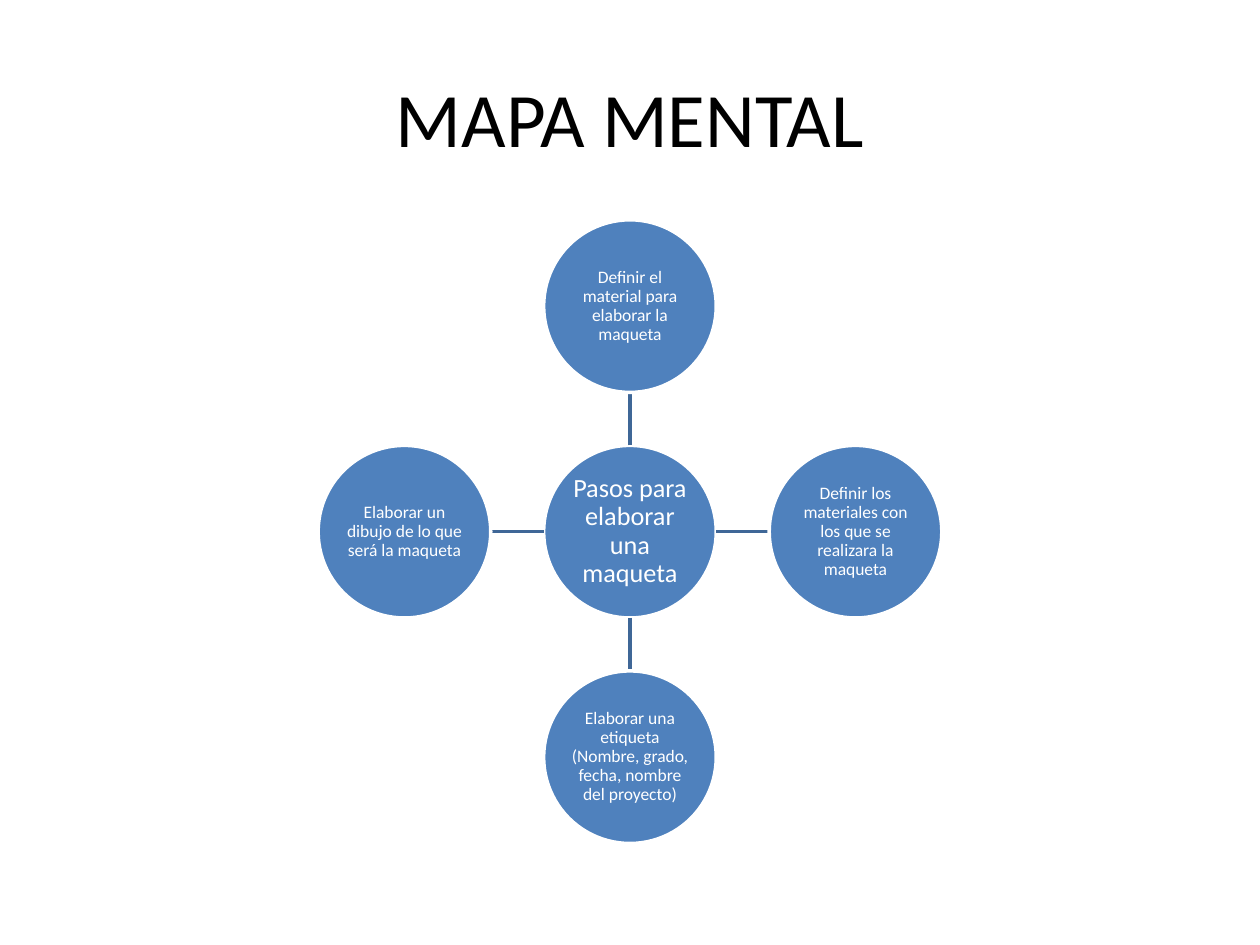
from dataclasses import dataclass

from lxml.etree import SubElement as Sub
from pptx import Presentation as Deck
from pptx.dml.color import RGBColor as Rgb
from pptx.enum.shapes import MSO_CONNECTOR as Link, MSO_SHAPE as Kind
from pptx.enum.text import MSO_ANCHOR as Anchor, PP_ALIGN as Align
from pptx.oxml.ns import qn
from pptx.util import Inches, Pt


@dataclass(frozen=True)
class Theme:
    font: str = "Calibri"
    ink: str = "000000"
    pale: str = "FFFFFF"
    disc: str = "4F81BD"
    spoke: str = "3F6797"
    title: int = 44
    hub: int = 15
    step: int = 10
    edge: int = 2


class Pen:
    """Draws the parts of a mind map on one slide in one style."""

    def __init__(self, slide, theme):
        self.slide, self.theme = slide, theme

    def apply(self, item, form):
        for name, value in form.items():
            setattr(item, name, value)

    def label(self, shape, text, size, color, inset, space):
        frame = shape.text_frame
        sides = ("left", "top", "right", "bottom")
        form = {f"margin_{side}": Inches(inset) for side in sides}
        self.apply(frame, form | {"word_wrap": True, "vertical_anchor": Anchor.MIDDLE})
        para = frame.paragraphs[0]
        self.apply(para, {"text": text, "alignment": Align.CENTER, "line_spacing": space})
        self.apply(para.runs[0].font, {"name": self.theme.font, "size": Pt(size)})
        para.runs[0].font.color.rgb = Rgb.from_string(color)

    def stroke(self, line, color):
        line.color.rgb = Rgb.from_string(color)
        line.width = Pt(self.theme.edge)

    def title(self, text, *box):
        shape = self.slide.shapes.add_textbox(*map(Inches, box))
        self.label(shape, text, self.theme.title, self.theme.ink, 0.1, 1.0)

    def disc(self, text, x, y, size, point):
        box = (x - size / 2, y - size / 2, size, size)
        shape = self.slide.shapes.add_shape(Kind.OVAL, *map(Inches, box))
        shape.shadow.inherit = False
        shape.fill.solid()
        shape.fill.fore_color.rgb = Rgb.from_string(self.theme.disc)
        self.stroke(shape.line, self.theme.pale)
        self.label(shape, text, point, self.theme.pale, 0.01, 0.9)

    def spoke(self, *ends):
        line = self.slide.shapes.add_connector(Link.STRAIGHT, *map(Inches, ends))
        Sub(line._element.spPr, qn("a:effectLst"))
        self.stroke(line.line, self.theme.spoke)


STEPS = (
    ("Definir el material para elaborar la maqueta", 0, -1),
    ("Definir los materiales con los que se realizara la maqueta", 1, 0),
    ("Elaborar una etiqueta (Nombre, grado, fecha, nombre del proyecto)", 0, 1),
    ("Elaborar un dibujo de lo que será la maqueta", -1, 0),
)


def main():
    deck = Deck()
    deck.slide_width, deck.slide_height = Inches(10), Inches(7.5)
    theme = Theme()
    pen = Pen(deck.slides.add_slide(deck.slide_layouts[6]), theme)
    pen.title("MAPA MENTAL", 0.5, 0.3, 9, 1.25)

    x, y, size, reach = 5, 4.22, 1.37, 1.79
    near, far = size / 2, reach - size / 2
    pen.disc("Pasos para elaborar una maqueta", x, y, size, theme.hub)
    for text, dx, dy in STEPS:
        pen.spoke(x + dx * near, y + dy * near, x + dx * far, y + dy * far)
        pen.disc(text, x + dx * reach, y + dy * reach, size, theme.step)
    deck.save("out.pptx")


if __name__ == "__main__":
    main()
